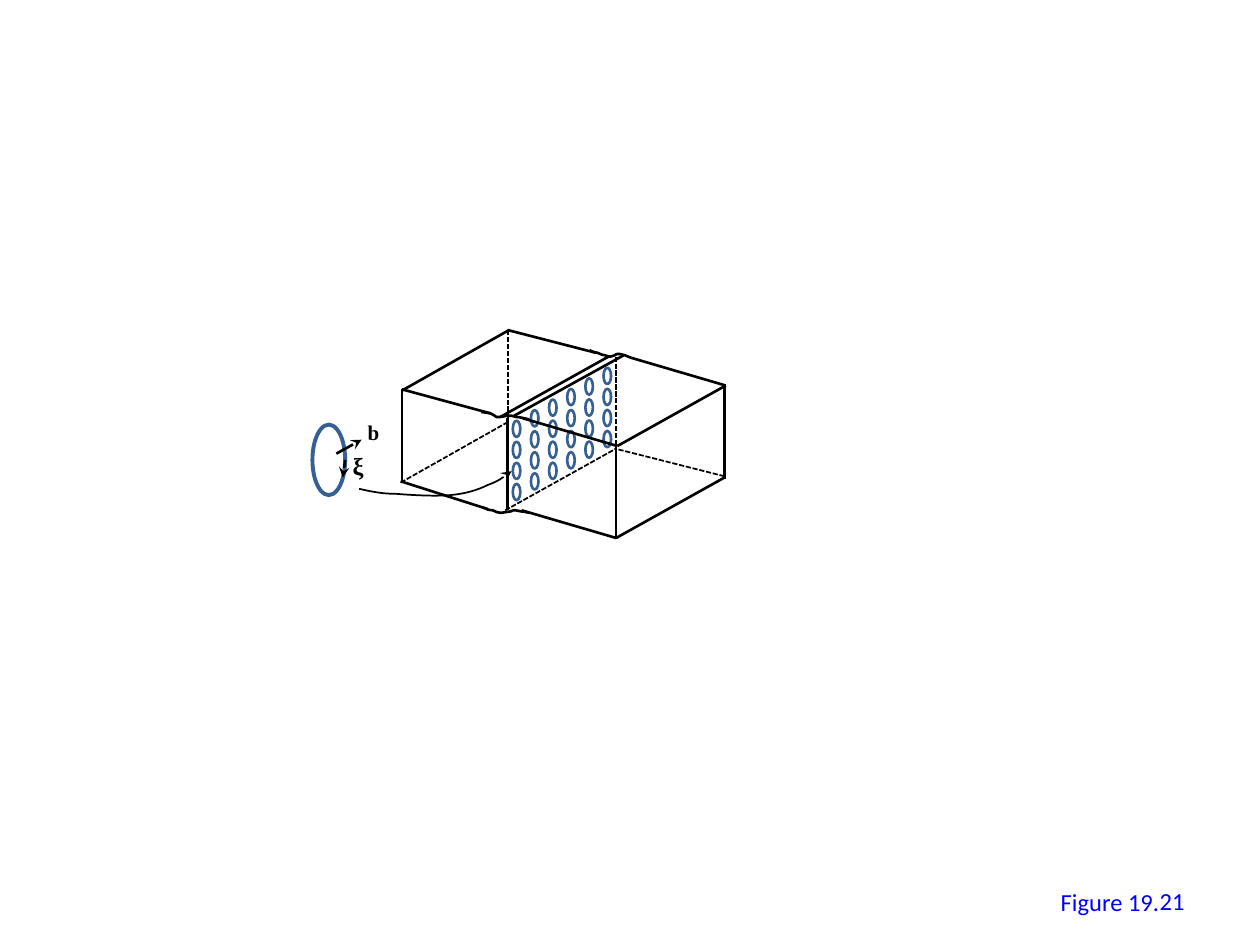
from lxml.etree import SubElement
from pptx import Presentation
from pptx.dml.color import RGBColor
from pptx.enum.dml import MSO_LINE
from pptx.enum.shapes import MSO_CONNECTOR, MSO_SHAPE
from pptx.enum.text import MSO_ANCHOR, PP_ALIGN
from pptx.oxml.ns import qn
from pptx.util import Pt

PX = 9144
BLACK, BLUE, STEEL = "000000", "0000FF", "376092"

SOLID_EDGES = [
    (403, 332, 403, 405), (389, 328, 319, 309), (473, 280, 403, 262),
    (576, 306, 501, 284), (489, 427, 414, 405), (387, 404, 318, 382),
    (490, 354, 576, 306), (489, 427, 575, 379), (408, 330, 495, 282),
    (397, 331, 483, 283), (319, 309, 319, 383), (489, 354, 489, 428),
    (575, 306, 575, 380), (319, 310, 404, 262),
]
HIDDEN_EDGES = [
    (575, 378, 488, 356), (401, 405, 489, 356), (318, 383, 403, 335),
    (403, 262, 403, 336), (489, 283, 489, 356),
]
FRONT_EDGE = (490, 354, 415, 332)
VECTORS = [(267, 360, 287, 349), (274, 365, 272, 379)]

BOTTOM_STEP = [
    (384, 403), (386, 404), (388, 405), (391, 405), (393, 406), (395, 407),
    (397, 407), (400, 407), (403, 406), (405, 406), (407, 405), (408, 405),
    (409, 405), (411, 405), (412, 406), (414, 406), (416, 406), (420, 407),
    (420, 407),
]
FRONT_STEP = [
    (382, 327), (384, 327), (387, 328), (389, 328), (391, 329), (393, 330),
    (394, 331), (396, 331), (396, 331), (397, 331), (399, 331), (401, 330),
    (402, 330), (404, 330), (405, 330), (406, 330), (408, 330), (408, 330),
    (410, 331), (412, 331), (416, 332), (416, 332), (420, 333),
]
BACK_STEP = [
    (468, 278), (470, 279), (472, 280), (474, 280), (476, 281), (479, 282),
    (480, 282), (482, 283), (482, 283), (483, 283), (483, 283), (484, 283),
    (485, 283), (486, 283), (487, 282), (488, 282), (488, 282), (489, 281),
    (490, 281), (491, 281), (491, 281), (492, 281), (493, 281), (495, 282),
    (496, 282), (498, 283), (501, 284), (501, 284),
]
POINTER = [
    (406, 374), (401, 378), (395, 382), (387, 385), (379, 389), (369, 392),
    (357, 393), (345, 394), (327, 393), (315, 392), (303, 392), (294, 390),
    (285, 388),
]
BIG_LOOP = (248, 337, 26, 56)
LOOP_COLS, LOOP_ROWS = 6, 4
LOOP_X, LOOP_Y, LOOP_W, LOOP_H = 407, 384, 6, 13
COL_DX, COL_DY, ROW_DY = 14.4, 8.4, 16.7

TIMES, CALIBRI = "Times New Roman", "Calibri"
LABELS = [
    ("Figure 19.", (832, 699, 99, 34), CALIBRI, 14, BLUE, False),
    ("b", (282, 328, 30, 30), TIMES, 12, BLACK, True),
    ("ξ", (270, 353, 30, 34), TIMES, 14, BLACK, True),
]
NUMBER = ("21", (717, 695, 233, 40), CALIBRI, 14, BLUE, False)


def emu(*values):
    return [round(v * PX) for v in values]


def rgb(value):
    return RGBColor.from_string(value)


def style_line(line, color, width):
    line.color.rgb = rgb(color)
    line.width = Pt(width)


def add_arrowhead(sp, end):
    SubElement(sp.line._get_or_add_ln(), qn(f"a:{end}"), type="stealth")


def add_edge(s, ends, width=1.5, dashed=False):
    sp = s.shapes.add_connector(MSO_CONNECTOR.STRAIGHT, *emu(*ends))
    style_line(sp.line, BLACK, width)
    if dashed:
        sp.line.dash_style = MSO_LINE.SQUARE_DOT
    SubElement(sp._element.spPr, qn("a:effectLst"))
    return sp


def bend_segments(sp):
    outline = next(sp._element.iter(qn("a:path")))
    segments = outline.findall(qn("a:lnTo"))
    for i in range(0, len(segments) - 2, 3):
        curve = SubElement(outline, qn("a:cubicBezTo"))
        segments[i].addprevious(curve)
        for segment in segments[i:i + 3]:
            curve.append(segment[0])
            outline.remove(segment)


def add_curve(s, pts, width=1.5):
    fb = s.shapes.build_freeform(*emu(*pts[0]))
    fb.add_line_segments([emu(*pt) for pt in pts[1:]], close=False)
    sp = fb.convert_to_shape()
    bend_segments(sp)
    sp.fill.background()
    sp.shadow.inherit = False
    style_line(sp.line, BLACK, width)
    return sp


def add_loop(shapes, box, width):
    sp = shapes.add_shape(MSO_SHAPE.OVAL, *emu(*box))
    sp.fill.background()
    sp.shadow.inherit = False
    style_line(sp.line, STEEL, width)


def add_label(s, text, box, font, size, color, bold):
    tf = s.shapes.add_textbox(*emu(*box)).text_frame
    tf.word_wrap = False
    p = tf.paragraphs[0]
    r = p.add_run()
    r.text = text
    r.font.name, r.font.size, r.font.bold = font, Pt(size), bold
    r.font.color.rgb = rgb(color)
    return tf


def main():
    prs = Presentation()
    prs.slide_width, prs.slide_height = emu(1000, 750)
    s = prs.slides.add_slide(prs.slide_layouts[6])

    for pts in (BOTTOM_STEP, FRONT_STEP, BACK_STEP):
        add_curve(s, pts)
    for ends in SOLID_EDGES:
        add_edge(s, ends)
    for ends in HIDDEN_EDGES:
        add_edge(s, ends, 1, True)

    add_loop(s.shapes, BIG_LOOP, 2.25)
    for col in range(LOOP_COLS):
        group = s.shapes.add_group_shape()
        for row in range(LOOP_ROWS):
            x = LOOP_X + col * COL_DX
            y = LOOP_Y - col * COL_DY - row * ROW_DY
            add_loop(group.shapes, (x, y, LOOP_W, LOOP_H), 1.5)

    add_edge(s, FRONT_EDGE)
    for ends in VECTORS:
        add_arrowhead(add_edge(s, ends), "tailEnd")
    add_arrowhead(add_curve(s, POINTER, 1), "headEnd")

    for label in LABELS:
        add_label(s, *label)
    tf = add_label(s, *NUMBER)
    tf.word_wrap = True
    tf.vertical_anchor = MSO_ANCHOR.MIDDLE
    tf.paragraphs[0].alignment = PP_ALIGN.RIGHT

    prs.save("out.pptx")


if __name__ == "__main__":
    main()
